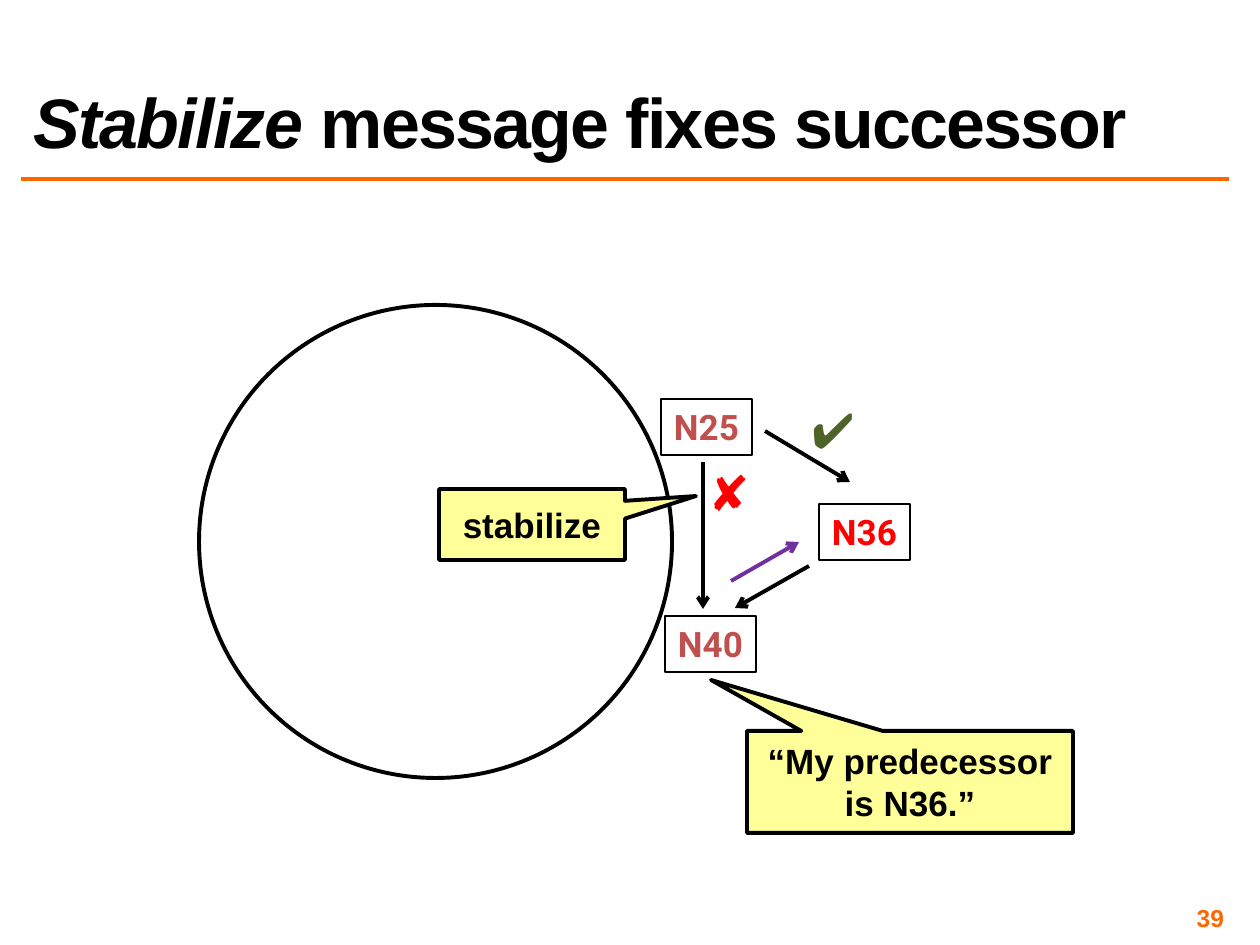
from lxml import etree
from pptx import Presentation
from pptx import util as u
from pptx.dml.color import RGBColor
from pptx.enum import shapes, text
from pptx.oxml.ns import qn

PX = 914400 / 126
BLACK, ORANGE, RED = "000000", "FF6600", "FF0000"
ROSE, GREEN, PURPLE, YELLOW = "C0504D", "4F6228", "7030A0", "FFFF99"
SHAPE = shapes.MSO_SHAPE
ALIGN = text.PP_ALIGN
ANCHOR = text.MSO_ANCHOR


def px(*vals):
    return [u.Emu(round(v * PX)) for v in vals]


def color(code):
    return RGBColor.from_string(code)


def write(shape, runs, size=20, font="Arial", ink=BLACK, align=ALIGN.CENTER,
          anchor=ANCHOR.TOP, wrap=True, inset=None, space=None, track=None):
    """Fill a shape with one paragraph of (words, italic) runs."""
    frame = shape.text_frame
    frame.word_wrap = wrap
    frame.vertical_anchor = anchor
    if inset is not None:
        frame.margin_left, frame.margin_right, frame.margin_top, frame.margin_bottom = px(*[inset] * 4)
    para = frame.paragraphs[0]
    para.alignment = align
    para.line_spacing = space
    for words, slant in runs:
        run = para.add_run()
        run.text = words
        run.font.name, run.font.size = font, u.Pt(size)
        run.font.bold, run.font.italic = True, slant
        run.font.color.rgb = color(ink)
        if track is not None:
            run._r.get_or_add_rPr().set("spc", str(track * 100))


def label(slide, box, runs, **style):
    write(slide.shapes.add_textbox(*px(*box)), runs, **style)


def outline(slide, kind, box, width=2.25, fill=None):
    shape = slide.shapes.add_shape(kind, *px(*box))
    shape.shadow.inherit = False
    if fill:
        shape.fill.solid()
        shape.fill.fore_color.rgb = color(fill)
    else:
        shape.fill.background()
    shape.line.color.rgb = color(BLACK)
    shape.line.width = u.Pt(width)
    return shape


def node(slide, name, left, top, ink):
    box = outline(slide, SHAPE.RECTANGLE, (left, top, 91, 56), width=0.75)
    write(box, [(name, False)], font="Roboto", ink=ink, wrap=False)


def callout(slide, words, box, tip):
    """Draw a speech box whose pointer ends at tip, in px."""
    left, top, width, height = box
    shape = outline(slide, SHAPE.RECTANGULAR_CALLOUT, box, fill=YELLOW)
    shape.adjustments[0] = (tip[0] - left) / width - 0.5
    shape.adjustments[1] = (tip[1] - top) / height - 0.5
    write(shape, [(words, False)], anchor=ANCHOR.MIDDLE)


def line(slide, start, end, ink=BLACK, width=2.25, arrow=True):
    link = slide.shapes.add_connector(shapes.MSO_CONNECTOR.STRAIGHT, *px(*start, *end))
    link.line.color.rgb = color(ink)
    link.line.width = u.Pt(width)
    if arrow:
        etree.SubElement(link.line._get_or_add_ln(), qn("a:tailEnd"), type="arrow")
    etree.SubElement(link._element.spPr, qn("a:effectLst"))


def mark(slide, sign, left, top, ink):
    label(slide, (left, top, 74, 72), [(sign, False)], size=28, ink=ink, wrap=False)


def main():
    deck = Presentation()
    deck.slide_width, deck.slide_height = px(1260, 945)
    slide = deck.slides.add_slide(deck.slide_layouts[6])

    line(slide, (21, 179), (1229, 179), ORANGE, 2, arrow=False)
    label(slide, (935, 903, 294, 29), [("39", False)], size=14, ink=ORANGE,
          align=ALIGN.RIGHT, anchor=ANCHOR.MIDDLE, inset=5)
    label(slide, (21, 21, 1207, 147),
          [("Stabilize ", True), ("message fixes successor", False)],
          size=40, align=ALIGN.LEFT, anchor=ANCHOR.BOTTOM, space=0.8, track=-1)

    outline(slide, SHAPE.OVAL, (199, 305, 473, 473))
    for name, left, top, ink in (("N36", 819, 504, RED), ("N40", 665, 616, ROSE),
                                 ("N25", 661, 399, ROSE)):
        node(slide, name, left, top, ink)

    line(slide, (703, 462), (703, 609))
    line(slide, (809, 566), (735, 608))
    line(slide, (731, 581), (799, 542), PURPLE)
    callout(slide, "stabilize", (439, 489, 186, 71), (696, 496))
    callout(slide, "“My predecessor is N36.”", (747, 731, 326, 102), (711, 680))
    line(slide, (765, 431), (850, 482))

    mark(slide, "✔", 796, 393, GREEN)
    mark(slide, "✘", 692, 456, RED)
    deck.save("out.pptx")


if __name__ == "__main__":
    main()
